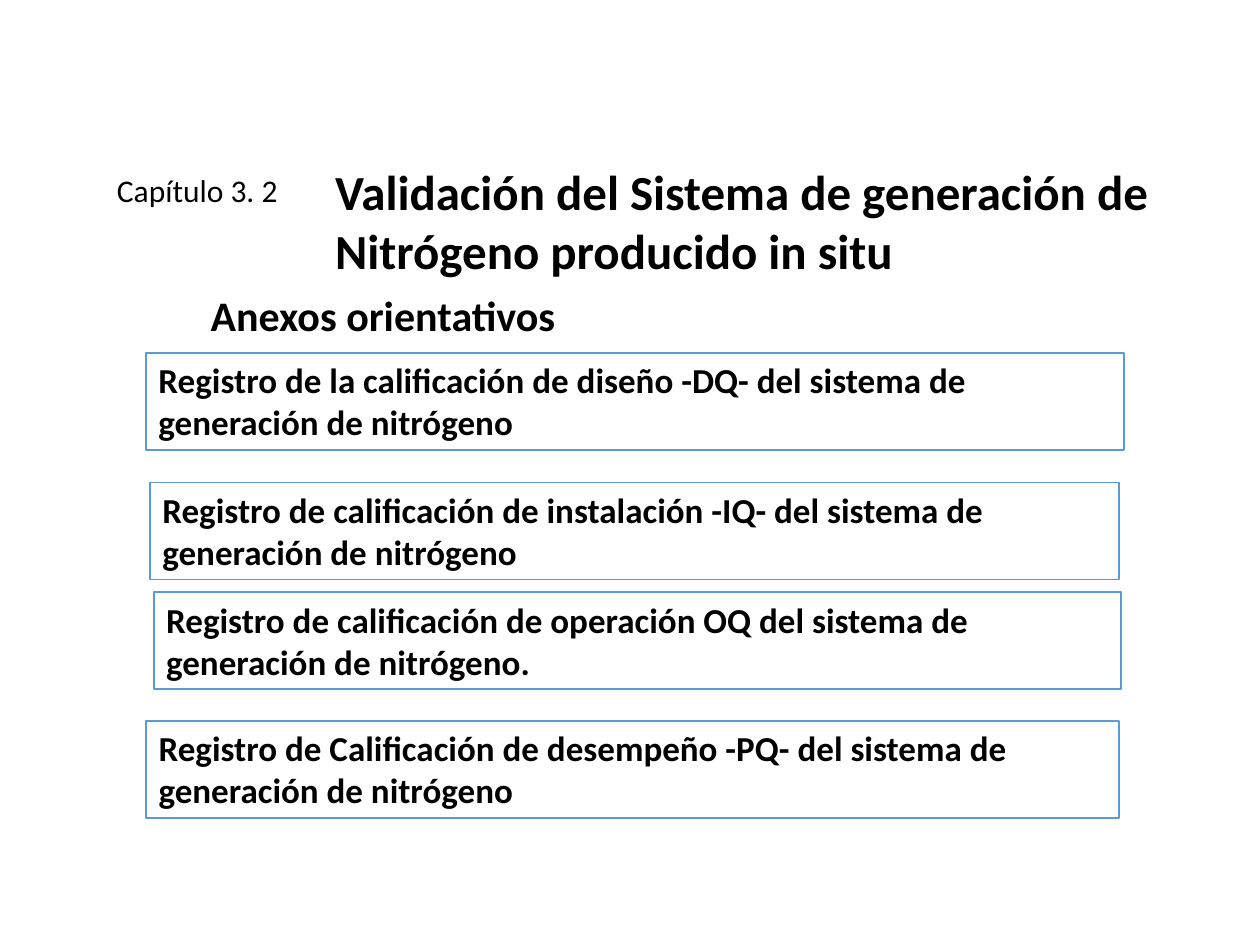
from dataclasses import dataclass

from pptx import Presentation
from pptx.dml.color import RGBColor as RGB
from pptx.enum.shapes import MSO_SHAPE as Shape
from pptx.enum.text import MSO_ANCHOR as Anchor, MSO_AUTO_SIZE as AutoSize, PP_ALIGN as Align
from pptx.util import Inches, Pt


@dataclass(frozen=True)
class Theme:
    font: str = "Calibri"
    ink: RGB = RGB(0, 0, 0)
    paper: RGB = RGB(255, 255, 255)
    border: RGB = RGB(0x5B, 0x9B, 0xD5)
    title: int = 28
    heading: int = 24
    record: int = 20
    chapter: int = 18


def write(sp, text, theme, size, bold=True, align=Align.LEFT, anchor=Anchor.TOP):
    tf = sp.text_frame
    tf.word_wrap = True
    tf.auto_size = AutoSize.NONE
    tf.vertical_anchor = anchor
    p = tf.paragraphs[0]
    p.alignment = align
    p.line_spacing = 1.0
    p.space_before = Pt(0)
    r = p.add_run()
    r.text = text
    r.font.name = theme.font
    r.font.size = Pt(size)
    r.font.bold = bold
    r.font.color.rgb = theme.ink


class Deck:
    COLUMNS, ROWS = 100, 75

    def __init__(self, theme):
        self.theme = theme
        self.prs = Presentation()
        self.prs.slide_width, self.prs.slide_height = Inches(10), Inches(7.5)
        self.s = self.prs.slides.add_slide(self.prs.slide_layouts[5])

    def area(self, col, row, cols, rows):
        x = self.prs.slide_width / self.COLUMNS
        y = self.prs.slide_height / self.ROWS
        return [round(v) for v in (col * x, row * y, cols * x, rows * y)]

    def title(self, text, *cells):
        sp = self.s.shapes.title
        sp.left, sp.top, sp.width, sp.height = self.area(*cells)
        write(sp, text, self.theme, self.theme.title)

    def label(self, text, *cells, **style):
        sp = self.s.shapes.add_textbox(*self.area(*cells))
        write(sp, text, self.theme, **style)

    def record(self, text, *cells):
        sp = self.s.shapes.add_shape(Shape.RECTANGLE, *self.area(*cells))
        sp.shadow.inherit = False
        sp.fill.solid()
        sp.fill.fore_color.rgb = self.theme.paper
        sp.line.color.rgb = self.theme.border
        sp.line.width = Pt(1)
        write(sp, text, self.theme, self.theme.record)


RECORD_ROWS = 7.7
RECORDS = [
    ("Registro de la calificación de diseño -DQ- del sistema de generación de nitrógeno", 11.6, 28, 77.6),
    ("Registro de calificación de instalación -IQ- del sistema de generación de nitrógeno", 11.9, 38.3, 76.9),
    ("Registro de calificación de operación OQ del sistema de generación de nitrógeno.", 12.2, 47, 76.8),
    ("Registro de Calificación de desempeño -PQ- del sistema de generación de nitrógeno", 11.6, 57.2, 77.2),
]


def main():
    theme = Theme()
    deck = Deck(theme)
    deck.title("Validación del Sistema de generación de Nitrógeno producido in situ", 25.6, 12.3, 68.3, 10.4)
    for text, col, row, cols in RECORDS:
        deck.record(text, col, row, cols, RECORD_ROWS)
    deck.label("Anexos orientativos", 12.2, 22.5, 36.4, 5, size=theme.heading, align=Align.CENTER)
    deck.label("Capítulo 3. 2", 8.3, 13.1, 27.8, 4, size=theme.chapter, bold=False)
    deck.prs.save("out.pptx")


if __name__ == "__main__":
    main()
